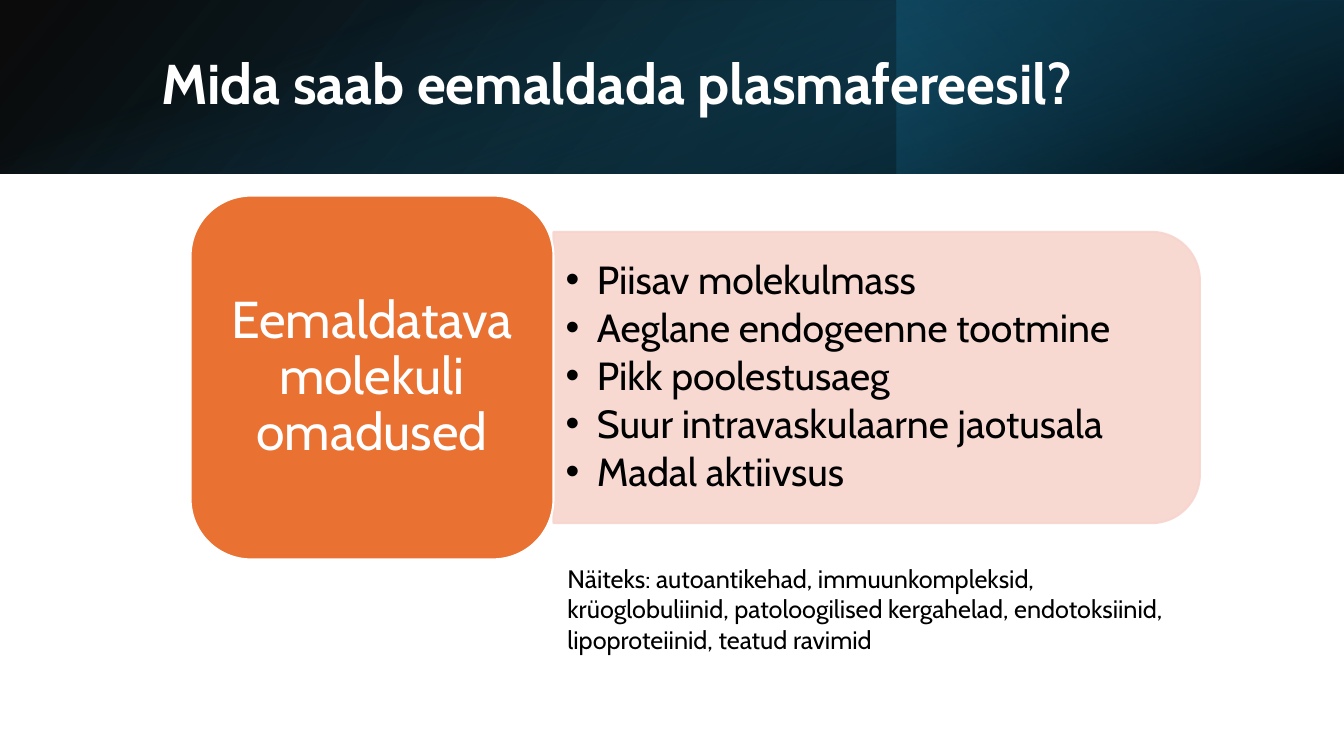
from lxml.etree import SubElement
from pptx import Presentation
from pptx.dml.color import RGBColor
from pptx.enum.shapes import MSO_SHAPE as Shape
from pptx.enum.text import MSO_ANCHOR as Anchor, MSO_AUTO_SIZE as AutoSize, PP_ALIGN as Align
from pptx.oxml.ns import qn
from pptx.util import Pt

PX = 9144  # 100 px to the inch
FONT = "Cabin"
COLORS = {
    "white": "FFFFFF", "black": "000000", "deep": "104862", "night": "0B3041",
    "teal": "156082", "orange": "E97132", "blush": "F7D5CE",
}


def add_block(kind, place, alphas=()):
    """Add a shape and return it with a function-free, shadowless look."""
    block = page.shapes.add_shape(kind, *[v * PX for v in place])
    block.shadow.inherit = False
    return block


def write(box, lines, size, color, margins, **look):
    """Fill a box with paragraphs of one style."""
    frame = box.text_frame
    frame.word_wrap = True
    frame.auto_size = AutoSize.NONE
    frame.vertical_anchor = look.pop("anchor", Anchor.MIDDLE)
    bold = look.pop("bold", False)
    across, down = [v * PX for v in margins]
    frame.margin_left = frame.margin_right = across
    frame.margin_top = frame.margin_bottom = down
    style = {"alignment": Align.LEFT, "line_spacing": 0.9,
             "space_before": Pt(0), "space_after": Pt(0)} | look
    for index, line in enumerate(lines):
        para = frame.add_paragraph() if index else frame.paragraphs[0]
        for name, value in style.items():
            setattr(para, name, value)
        span = para.add_run()
        span.text = line
        for name, value in {"name": FONT, "size": Pt(size), "bold": bold}.items():
            setattr(span.font, name, value)
        span.font.color.rgb = RGBColor.from_string(COLORS[color])


deck = Presentation()
deck.slide_width, deck.slide_height = 1333 * PX, 750 * PX
page = deck.slides.add_slide(deck.slide_layouts[1])
title, traits = page.placeholders
layers = page.shapes._spTree

# Header band: place, rotation, mirrored, angle, stops of (position, colour, opacity)
bands = [
    ((0, 0, 1333, 172), 0, True, 140, [(0, "black", 96), (100, "deep", 100)]),
    ((889, 0, 444, 172), 180, False, 320, [(19, "night", 68), (100, "teal", 79)]),
    ((580, -580, 172, 1333), 90, False, 340, [(23, "teal", 0), (99, "black", 74)]),
]
for place, rotation, mirrored, angle, stops in bands:
    band = add_block(Shape.RECTANGLE, place)
    band.rotation = rotation
    if mirrored:
        band._element.spPr.find(qn("a:xfrm")).set("flipH", "1")
    band.line.fill.background()
    band.fill.gradient()
    band.fill.gradient_angle = 360 - angle
    for stop, (position, color, opacity) in zip(band.fill.gradient_stops, stops):
        stop.position = position / 100
        stop.color.rgb = RGBColor.from_string(COLORS[color])
    for tone, (_, _, opacity) in zip(band._element.spPr.iter(qn("a:srgbClr")), stops):
        SubElement(tone, qn("a:alpha")).set("val", str(opacity * 1000))

# Title
layers.append(title._element)
title.left, title.top, title.width, title.height = [v * PX for v in (150, 38, 1098, 96)]
write(title, ["Mida saab eemaldada plasmafereesil?"], 40, "white", (10, 5), bold=True)

# Panel behind the list, and the badge that names it
panel = add_block(Shape.ROUND_2_SAME_RECTANGLE, (725, 54, 289, 641))
panel.rotation = 90
badge = add_block(Shape.ROUNDED_RECTANGLE, (189, 194, 360, 361))
for block, fill, line in [(panel, "blush", "blush"), (badge, "orange", "white")]:
    block.fill.solid()
    block.fill.fore_color.rgb = RGBColor.from_string(COLORS[fill])
    block.line.color.rgb = RGBColor.from_string(COLORS[line])
    block.line.width = Pt(1.5)
for tone in panel._element.spPr.iter(qn("a:srgbClr")):
    SubElement(tone, qn("a:alpha")).set("val", "90000")
write(badge, ["Eemaldatava molekuli omadused"], 37, "white", (15, 8), alignment=Align.CENTER)

# Bulleted list
layers.append(traits._element)
traits.left, traits.top, traits.width, traits.height = [v * PX for v in (549, 244, 626, 261)]
write(traits, [
    "Piisav molekulmass",
    "Aeglane endogeenne tootmine",
    "Pikk poolestusaeg",
    "Suur intravaskulaarne jaotusala",
    "Madal aktiivsus",
], 28, "black", (12, 6), space_after=Pt(4))
for para in traits.text_frame.paragraphs:
    props = para._p.get_or_add_pPr()
    props.set("marL", str(31 * PX))
    props.set("indent", str(-31 * PX))
    SubElement(props, qn("a:buChar")).set("char", "•")

# Examples
examples = page.shapes.add_textbox(*[v * PX for v in (553, 554, 636, 101)])
write(examples, [
    "Näiteks: autoantikehad, immuunkompleksid, krüoglobuliinid, patoloogilised "
    "kergahelad, endotoksiinid, lipoproteiinid, teatud ravimid",
], 18, "black", (10, 5), anchor=Anchor.TOP, line_spacing=1.0)

deck.save("out.pptx")
